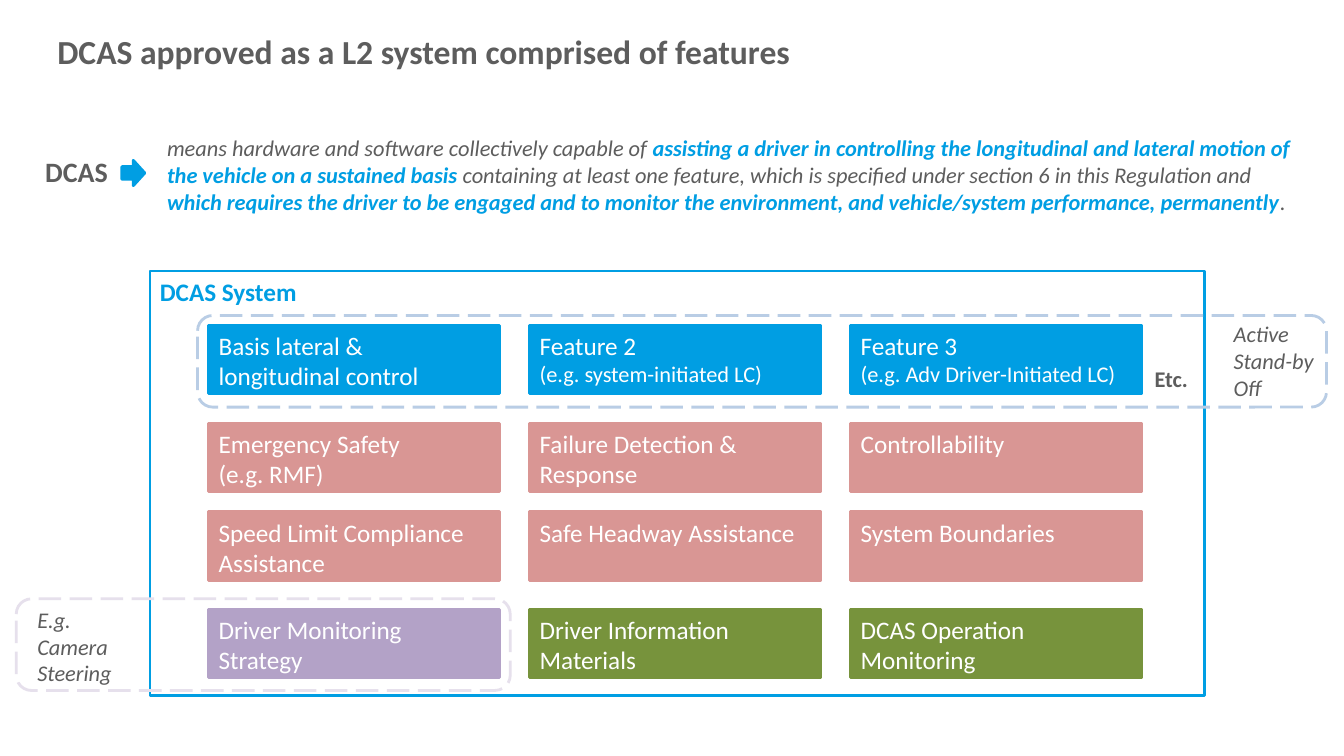
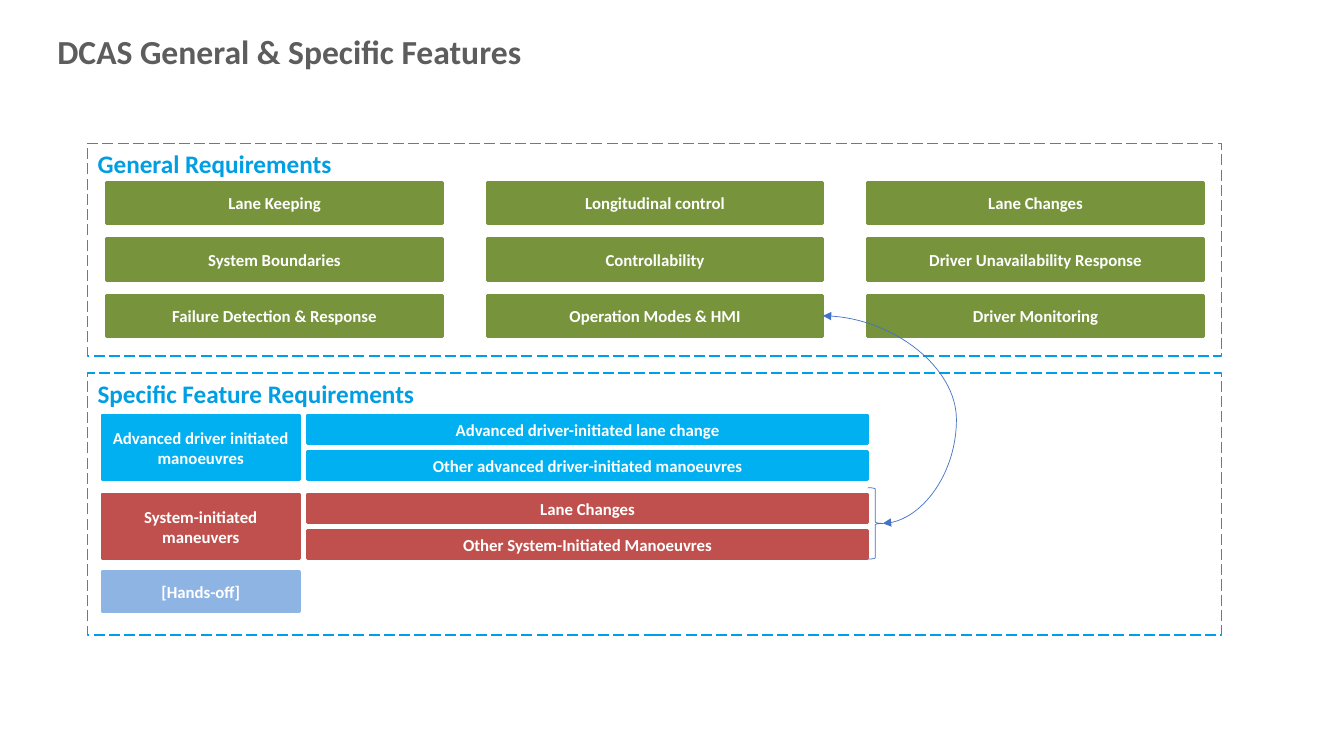
from dataclasses import dataclass

from lxml.etree import SubElement
from pptx import Presentation
from pptx.dml.color import RGBColor as Rgb
from pptx.enum.dml import MSO_LINE as Dash
from pptx.enum.shapes import MSO_CONNECTOR as Connector, MSO_SHAPE as Preset
from pptx.enum.text import MSO_ANCHOR as Anchor, MSO_AUTO_SIZE as AutoSize, PP_ALIGN as Align
from pptx.oxml.ns import qn
from pptx.util import Cm, Pt


@dataclass(frozen=True)
class Theme:
    font: str = "Calibri"
    grey: str = "5D5D5D"
    white: str = "FFFFFF"
    accent: str = "009EE3"
    sky: str = "00B0F0"
    rose: str = "D99694"
    red: str = "C0504D"
    purple: str = "B3A2C7"
    green: str = "77933C"
    pale_blue: str = "B9CDE5"
    pale_purple: str = "E6E0EC"
    soft_blue: str = "8EB4E3"
    link: str = "4472C4"
    title_size: int = 24
    term_size: int = 20
    body_size: int = 18
    note_size: int = 16
    small_size: int = 12


theme = Theme()
TITLE = {"size": theme.title_size, "bold": True, "color": theme.grey}
TERM = {"size": theme.term_size, "bold": True, "color": theme.grey}
HEADING = {"size": theme.body_size, "bold": True, "color": theme.accent}
FEATURE = {"size": theme.body_size, "color": theme.white}
EXAMPLE = {"size": theme.note_size}
NOTE = {"size": theme.note_size, "italic": True, "color": theme.grey}
ETC = {"size": theme.note_size, "bold": True, "color": theme.grey}
SMALL = {"size": theme.small_size, "bold": True, "color": theme.white}
STRONG = {"bold": True, "color": theme.accent}


def write(box, lines, look, align=Align.LEFT, anchor=Anchor.TOP):
    frame = box.text_frame
    settings = {"word_wrap": True, "auto_size": AutoSize.NONE, "vertical_anchor": anchor}
    for key, value in settings.items():
        setattr(frame, key, value)
    for index, line in enumerate(lines):
        para = frame.add_paragraph() if index else frame.paragraphs[0]
        para.alignment = align
        for text, change in [(line, {})] if isinstance(line, str) else line:
            span = para.add_run()
            span.text = text
            values = {"name": theme.font, **look, **change}
            span.font.color.rgb = Rgb.from_string(values.pop("color"))
            values["size"] = Pt(values["size"])
            for key, value in values.items():
                setattr(span.font, key, value)


def draw(page, preset, place, line, fill=None, width=2, dash=None):
    box = page.shapes.add_shape(preset, *map(Cm, place))
    box.shadow.inherit = False
    box.line.color.rgb = Rgb.from_string(line)
    box.line.width = Pt(width)
    if dash:
        box.line.dash_style = dash
    if fill:
        box.fill.solid()
        box.fill.fore_color.rgb = Rgb.from_string(fill)
    else:
        box.fill.background()
    return box


deck = Presentation()
deck.slide_width, deck.slide_height = Cm(33.87), Cm(19.05)

pages = []
for heading in ("DCAS approved as a L2 system comprised of features",
                "DCAS General & Specific Features"):
    page = deck.slides.add_slide(deck.slide_layouts.get_by_name("Title Only"))
    title = page.shapes.title
    place = {"left": 1.19, "top": 0.66, "width": 23.62, "height": 2.06}
    for key, value in place.items():
        setattr(title, key, Cm(value))
    write(title, [heading], TITLE)
    pages.append(page)
system_page, requirements_page = pages

definition = [
    ("means hardware and software collectively capable of ", {}),
    ("assisting a driver in controlling the longitudinal and lateral motion of "
     "the vehicle on a sustained basis ", STRONG),
    ("containing at least one feature, which is specified under section 6 "
     "in this Regulation and ", {}),
    ("which requires the driver to be engaged and to monitor the environment, "
     "and vehicle/system performance, permanently", STRONG),
    (".", {}),
]
draw(system_page, Preset.RIGHT_ARROW, (3.07, 4.04, 0.58, 0.64), theme.accent, theme.accent)
system = draw(system_page, Preset.RECTANGLE, (3.78, 6.83, 26.57, 10.69), theme.accent)
write(system, ["DCAS System"], HEADING)

feature_rows = [
    (8.2, [(theme.accent, ["Basis lateral & longitudinal control"]),
           (theme.accent, ["Feature 2", [("(e.g. system-initiated LC)", EXAMPLE)]]),
           (theme.accent, ["Feature 3", [("(e.g. Adv Driver-Initiated LC)", EXAMPLE)]])]),
    (10.67, [(theme.rose, ["Emergency Safety", "(e.g. RMF)"]),
             (theme.rose, ["Failure Detection & Response"]),
             (theme.rose, ["Controllability"])]),
    (12.9, [(theme.rose, ["Speed Limit Compliance Assistance"]),
            (theme.rose, ["Safe Headway Assistance"]),
            (theme.rose, ["System Boundaries"])]),
    (15.36, [(theme.purple, ["Driver Monitoring Strategy"]),
             (theme.green, ["Driver Information Materials"]),
             (theme.green, ["DCAS Operation Monitoring"])]),
]
for top, features in feature_rows:
    for column, (color, lines) in enumerate(features):
        place = (5.26 + 8.09 * column, top, 7.34, 1.72)
        box = draw(system_page, Preset.RECTANGLE, place, color, color)
        write(box, lines, FEATURE)

for place, color in (((4.98, 7.95, 28.45, 2.31), theme.pale_blue),
                     ((0.41, 15.09, 12.45, 2.31), theme.pale_purple)):
    draw(system_page, Preset.ROUNDED_RECTANGLE, place, color, dash=Dash.LONG_DASH)

for place, lines, look in (
    ((3.96, 3.25, 29.03, 2.16), [definition], NOTE),
    ((0.89, 3.78, 2.77, 2.06), ["DCAS"], TERM),
    ((28.85, 9.07, 1.5, 1.22), ["Etc."], ETC),
    ((30.84, 7.95, 3, 2.16), ["Active", "Stand-by", "Off"], NOTE),
    ((0.69, 15.14, 3.1, 2.16), ["E.g. Camera", "Steering"], NOTE),
):
    write(system_page.shapes.add_textbox(*map(Cm, place)), lines, look)

for heading, top, height in (("General Requirements", 3.61, 5.36),
                             ("Specific Feature Requirements", 9.4, 6.6)):
    panel = draw(requirements_page, Preset.RECTANGLE, (2.21, top, 28.58, height),
                 theme.accent, width=1, dash=Dash.LONG_DASH)
    write(panel, [heading], HEADING)

general = [
    ["Lane Keeping", "Longitudinal control", "Lane Changes"],
    ["System Boundaries", "Controllability", "Driver Unavailability Response"],
    ["Failure Detection & Response", "Operation Modes & HMI", "Driver Monitoring"],
]
tiles = []
for row, names in enumerate(general):
    for column, name in enumerate(names):
        place = (2.69 + 9.59 * column, 4.6 + 1.42 * row, 8.46, 1.04)
        tiles.append((name, place, theme.green))

row_step, row_height = 0.91, 0.72
groups = [
    ("Advanced driver initiated manoeuvres", 10.46, theme.sky,
     ["Advanced driver-initiated lane change", "Other advanced driver-initiated manoeuvres"]),
    ("System-initiated maneuvers", 12.45, theme.red,
     ["Lane Changes", "Other System-Initiated Manoeuvres"]),
]
for label, top, color, names in groups:
    tiles.append((label, (2.57, top, 4.98, row_step + row_height), color))
    for row, name in enumerate(names):
        tiles.append((name, (7.76, top + row_step * row, 14.1, row_height), color))
tiles.append(("[Hands-off]", (2.57, 14.4, 4.98, 1.02), theme.soft_blue))

boxes = {}
for name, place, color in tiles:
    boxes[name] = draw(requirements_page, Preset.RECTANGLE, place, color, color)
    write(boxes[name], [name], SMALL, Align.CENTER, Anchor.MIDDLE)

brace = draw(requirements_page, Preset.RIGHT_BRACE, (21.87, 12.29, 0.38, 1.8),
             theme.link, width=0.5)
curve = requirements_page.shapes.add_connector(
    Connector.CURVE, Cm(22.25), Cm(13.19), Cm(20.74), Cm(7.96))
curve.begin_connect(brace, 1)
curve.end_connect(boxes["Operation Modes & HMI"], 3)
curve.begin_x = brace.left + brace.width
curve.line.color.rgb = Rgb.from_string(theme.link)
curve.line.width = Pt(0.5)
outline = curve.line._get_or_add_ln()
for end in ("a:headEnd", "a:tailEnd"):
    SubElement(outline, qn(end), type="triangle")
properties = curve._element.spPr
SubElement(properties, qn("a:effectLst"))
guides = properties.find(qn("a:prstGeom")).get_or_add_avLst()
SubElement(guides, qn("a:gd"), name="adj1", fmla="val -122900")

deck.save("out.pptx")
